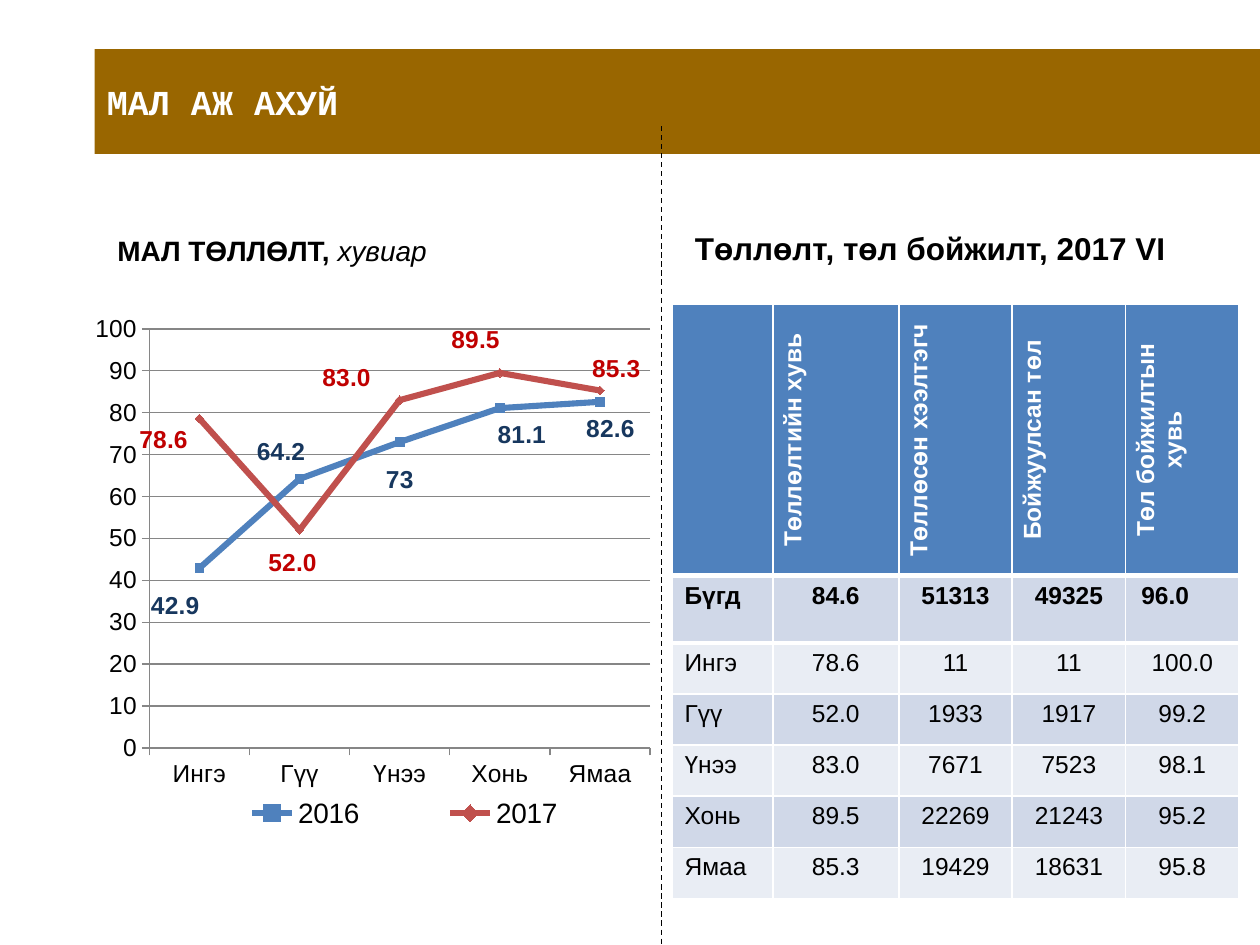
from lxml.etree import SubElement
from pptx import Presentation
from pptx.chart.data import CategoryChartData
from pptx.dml.color import RGBColor
from pptx.enum.chart import (XL_CHART_TYPE, XL_LABEL_POSITION, XL_LEGEND_POSITION,
                             XL_MARKER_STYLE, XL_TICK_MARK)
from pptx.enum.dml import MSO_LINE
from pptx.enum.shapes import MSO_CONNECTOR, MSO_SHAPE
from pptx.enum.text import MSO_ANCHOR, PP_ALIGN
from pptx.oxml import parse_xml
from pptx.oxml.ns import nsdecls, qn
from pptx.util import Pt

HEADS = ["", "Төллөлтийн хувь", "Төллөсөн хээлтэгч", "Бойжуулсан төл",
         "Төл бойжилтын хувь"]
ROWS = [
    ["Бүгд", "84.6", "51313", "49325", "96.0"],
    ["Ингэ", "78.6", "11", "11", "100.0"],
    ["Гүү", "52.0", "1933", "1917", "99.2"],
    ["Үнээ", "83.0", "7671", "7523", "98.1"],
    ["Хонь", "89.5", "22269", "21243", "95.2"],
    ["Ямаа", "85.3", "19429", "18631", "95.8"],
]
KINDS = ["Ингэ", "Гүү", "Үнээ", "Хонь", "Ямаа"]
SERIES = [
    ("2016", [42.9, 64.2, 73, 81.1, 82.6], "General", "4F81BD", "17375E",
     XL_MARKER_STYLE.SQUARE,
     [(-0.1, 0.07), (-0.09, -0.05), (-0.04, 0.07), (-0.02, 0.05), (-0.04, 0.05)]),
    ("2017", [78.6, 52, 83, 89.5, 85.3], "0.0", "C0504D", "C00000",
     XL_MARKER_STYLE.DIAMOND,
     [(-0.12, 0.04), (-0.07, 0.06), (-0.15, -0.04), (-0.1, -0.06), (-0.03, -0.04)]),
]


def color(code):
    """Turn a hex string into a colour."""
    return RGBColor.from_string(code)


def style(font, size, code="000000", bold=False, italic=False, face="Arial"):
    """Set every visible property of a font."""
    font.name, font.size = face, Pt(size)
    font.bold, font.italic = bold, italic
    font.color.rgb = color(code)


def add_run(para, text, *look, **more):
    """Add one styled run to a paragraph."""
    run = para.add_run()
    run.text = text
    style(run.font, *look, **more)


def place(x, y, w=None, h=None, inner=False):
    """Make a manual chart layout from fractions of the chart."""
    node = parse_xml(f"<c:layout {nsdecls('c')}><c:manualLayout/></c:layout>")
    parts = [("layoutTarget", "inner")] if inner else []
    if w:
        parts += [("xMode", "edge"), ("yMode", "edge")]
    parts += [("x", x), ("y", y)]
    if w:
        parts += [("w", w), ("h", h)]
    for tag, val in parts:
        SubElement(node[0], qn(f"c:{tag}")).set("val", str(val))
    return node


def add_title(slide, x, y, w, h):
    """Draw the title band."""
    band = slide.shapes.add_shape(MSO_SHAPE.RECTANGLE, Pt(x), Pt(y), Pt(w), Pt(h))
    band.shadow.inherit = False
    band.fill.solid()
    band.fill.fore_color.rgb = color("996600")
    band.line.fill.background()
    band.text_frame.vertical_anchor = MSO_ANCHOR.MIDDLE
    para = band.text_frame.paragraphs[0]
    para.alignment = PP_ALIGN.LEFT
    add_run(para, "МАЛ АЖ АХУЙ", 20, "FFFFFF", True, face="Courier New")


def add_head(slide, x, y, w, h, size, bold, slant=""):
    """Write a heading with an optional italic tail."""
    frame = slide.shapes.add_textbox(Pt(x), Pt(y), Pt(w), Pt(h)).text_frame
    frame.word_wrap = True
    frame.vertical_anchor = MSO_ANCHOR.BOTTOM
    para = frame.paragraphs[0]
    add_run(para, bold, size, bold=True)
    if slant:
        add_run(para, slant, size, italic=True)


def add_label(point, look, code, shift):
    """Label a chart point and move the label by a shift."""
    label = point.data_label
    style(label.font, 14, code, True)
    label.position = XL_LABEL_POSITION.RIGHT
    idx = label._get_or_add_dLbl().find(qn("c:idx"))
    form = parse_xml(f'<c:numFmt {nsdecls("c")} formatCode="{look}" sourceLinked="0"/>')
    idx.addnext(form)
    idx.addnext(place(*shift))


def add_lines(slide, x, y, w, h):
    """Draw the line chart of both years."""
    data = CategoryChartData()
    data.categories = KINDS
    for name, vals, look, *_ in SERIES:
        data.add_series(name, vals, look)
    chart = slide.shapes.add_chart(XL_CHART_TYPE.LINE_MARKERS, Pt(x), Pt(y),
                                   Pt(w), Pt(h), data).chart
    chart.has_title = False
    style(chart.font, 18, face="Calibri")
    chart.has_legend = True
    legend = chart.legend
    legend.position = XL_LEGEND_POSITION.BOTTOM
    legend.include_in_layout = False
    style(legend.font, 16)
    for axis in (chart.category_axis, chart.value_axis):
        style(axis.tick_labels.font, 14)
        axis.major_tick_mark = XL_TICK_MARK.OUTSIDE
        axis.format.line.color.rgb = color("868686")
    scale = chart.value_axis
    scale.minimum_scale, scale.maximum_scale, scale.major_unit = 0, 100, 10
    scale.tick_labels.number_format = "General"
    scale.tick_labels.number_format_is_linked = False
    scale.major_gridlines.format.line.color.rgb = color("868686")
    plot = chart.plots[0]
    plot.vary_by_categories = False
    for line, (_, _, look, code, ink, mark, shifts) in zip(plot.series, SERIES):
        line.smooth = False
        line.format.line.color.rgb = color(code)
        line.format.line.width = Pt(3.5)
        line.marker.style, line.marker.size = mark, 5
        line.marker.format.fill.solid()
        line.marker.format.fill.fore_color.rgb = color(code)
        line.marker.format.line.color.rgb = color(code)
        for i, shift in enumerate(shifts):
            add_label(line.points[i], look, ink, shift)
    area = chart._chartSpace.chart.plotArea
    for lead in area.iter(qn("c:showLeaderLines")):
        lead.set("val", "0")
    for old in area.findall(qn("c:layout")):
        area.remove(old)
    area.insert(0, place(0.113, 0.045, 0.866, 0.77, True))
    key = legend._element
    for old in key.findall(qn("c:layout")):
        key.remove(old)
    key.find(qn("c:legendPos")).addnext(place(0.15, 0.9, 0.81, 0.07))


def add_edge(cell, side, width):
    """Give one side of a cell a white border."""
    cell._tc.get_or_add_tcPr().insert(0, parse_xml(
        f'<a:{side} {nsdecls("a")} w="{Pt(width)}"><a:solidFill>'
        f'<a:srgbClr val="FFFFFF"/></a:solidFill></a:{side}>'))


def add_grid(slide, x, y, w, h):
    """Draw the table of young stock."""
    grid = slide.shapes.add_table(len(ROWS) + 1, len(HEADS), Pt(x), Pt(y),
                                  Pt(w), Pt(h)).table
    for col, part in zip(grid.columns, (8, 10, 9, 9, 9)):
        col.width = Pt(w * part / 45)
    tall = [154, 38.5] + [29.2] * 5
    for r, (row, high) in enumerate(zip([HEADS] + ROWS, tall)):
        grid.rows[r].height = Pt(high)
        back = "4F81BD" if r == 0 else "D0D8E8" if r % 2 else "E9EDF4"
        for c, text in enumerate(row):
            cell = grid.cell(r, c)
            cell.fill.solid()
            cell.fill.fore_color.rgb = color(back)
            if r < 2:
                add_edge(cell, "lnT" if r else "lnB", 3)
            if not text:
                continue
            para = cell.text_frame.paragraphs[0]
            para.alignment = PP_ALIGN.CENTER if c else PP_ALIGN.LEFT
            add_run(para, text, 14, "000000" if r else "FFFFFF", r < 2)
            if r == 0:
                cell._tc.get_or_add_tcPr().set("vert", "vert270")
    last = grid.cell(1, 4)
    last.margin_left = Pt(9)
    last.text_frame.paragraphs[0].alignment = PP_ALIGN.LEFT


def add_rule(slide, x, top, end):
    """Draw the dashed rule between the halves."""
    rule = slide.shapes.add_connector(MSO_CONNECTOR.STRAIGHT, Pt(x), Pt(top),
                                      Pt(x), Pt(end))
    rule.line.color.rgb = color("000000")
    rule.line.width = Pt(0.75)
    rule.line.dash_style = MSO_LINE.DASH
    SubElement(rule._element.spPr, qn("a:effectLst"))


def main():
    """Build and save the slide."""
    deck = Presentation()
    deck.slide_width, deck.slide_height = Pt(720), Pt(540)
    slide = deck.slides.add_slide(deck.slide_layouts[6])
    add_head(slide, 60, 120, 318, 36, 16, "МАЛ ТӨЛЛӨЛТ, ", "хувиар")
    add_lines(slide, 48, 174, 330.5, 311)
    add_head(slide, 390, 120, 318, 36, 18, "Төллөлт, төл бойжилт, 2017 VI")
    add_grid(slide, 384, 174, 324, 338.5)
    add_title(slide, 54, 28, 666, 60)
    add_rule(slide, 378, 72, 540)
    deck.save("out.pptx")


if __name__ == "__main__":
    main()
